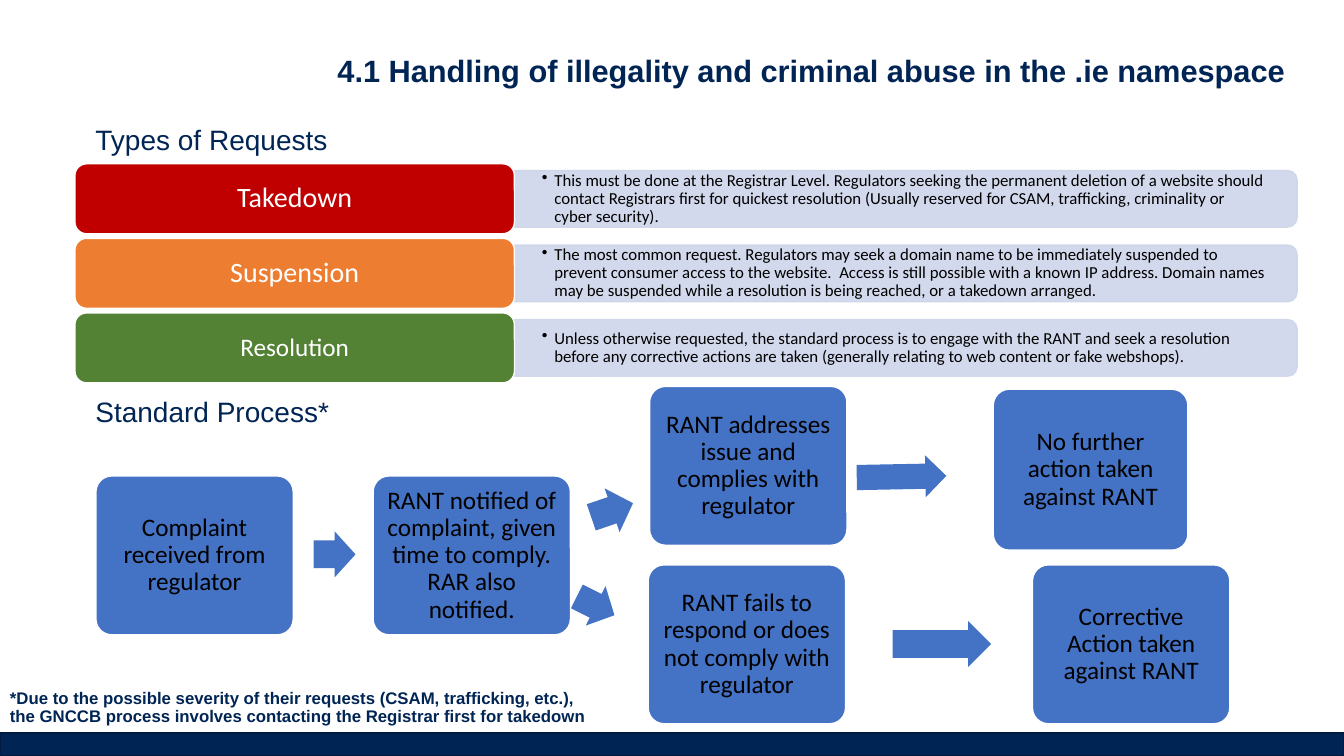
from pptx import Presentation
from pptx.dml.color import RGBColor
from pptx.enum.shapes import MSO_SHAPE
from pptx.enum.text import MSO_ANCHOR, PP_ALIGN
from pptx.oxml.ns import qn
from pptx.util import Pt
from lxml.etree import SubElement

COLORS = {
    "navy": "002554", "edge": "001B3E", "white": "FFFFFF", "black": "000000",
    "red": "C00000", "orange": "ED7D31", "green": "548235",
    "blue": "4472C4", "pale": "CFD5EA",
}

REQUESTS = [
    ("Takedown", "red", 20,
     "This must be done at the Registrar Level. Regulators seeking the permanent "
     "deletion of a website should contact Registrars first for quickest resolution "
     "(Usually reserved for CSAM, trafficking, criminality or cyber security)."),
    ("Suspension", "orange", 20,
     "The most common request. Regulators may seek a domain name to be immediately "
     "suspended to prevent consumer access to the website.  Access is still possible "
     "with a known IP address. Domain names may be suspended while a resolution is "
     "being reached, or a takedown arranged."),
    ("Resolution", "green", 18,
     "Unless otherwise requested, the standard process is to engage with the RANT and "
     "seek a resolution before any corrective actions are taken (generally relating to "
     "web content or fake webshops)."),
]

# Left, top, width, height within the process area
STEPS = [
    ("Complaint received from regulator", (0, 64, 141, 113.5)),
    ("RANT notified of complaint, given time to comply. RAR also notified.",
     (198, 64, 141, 113.5)),
    ("RANT addresses issue and complies with regulator", (395.5, 0, 141, 113.5)),
    ("RANT fails to respond or does not comply with regulator",
     (394.5, 127.5, 141, 113.5)),
    ("No further action taken against RANT", (641, 2, 139, 115)),
    ("Corrective Action taken against RANT", (669, 127.5, 141, 113.5)),
]

# Left, top, width, height within the process area, then rotation
ARROWS = [
    (155.5, 103.5, 30, 33, 0),
    (353, 72, 31.5, 33, -18.8),
    (342, 141, 30, 31.5, 26.6),
    (543.5, 49.5, 64, 30, -1.1),
    (569, 167.5, 70.5, 33, 0),
]


def color(name):
    return RGBColor.from_string(COLORS[name])


def write(shape, text, size=12, font="Calibri", ink="black", bold=False,
          align=PP_ALIGN.LEFT, anchor=MSO_ANCHOR.MIDDLE, inset=(7.2, 3.6), bullet=False):
    """Fill a shape with one formatted paragraph; inset is (sides, top and bottom)."""
    frame = shape.text_frame
    frame.word_wrap = True
    frame.vertical_anchor = anchor
    frame.margin_left = frame.margin_right = Pt(inset[0])
    frame.margin_top = frame.margin_bottom = Pt(inset[1])
    para = frame.paragraphs[0]
    para.alignment = align
    para.line_spacing = 0.9
    if bullet:
        props = para._p.get_or_add_pPr()
        props.set("marL", str(Pt(9)))
        props.set("indent", str(-Pt(9)))
        SubElement(props, qn("a:buChar")).set("char", "•")
    run = para.add_run()
    run.text = text
    run.font.size = Pt(size)
    run.font.name = font
    run.font.bold = bold
    run.font.color.rgb = color(ink)


def label(slide, text, box, **style):
    write(slide.shapes.add_textbox(*map(Pt, box)), text, **style)


def block(slide, kind, box, fill, line=None, turn=0, adjust=()):
    """Add a filled preset shape, outlined only when a line colour is given."""
    shape = slide.shapes.add_shape(kind, *map(Pt, box))
    shape.shadow.inherit = False
    shape.rotation = turn
    for index, value in enumerate(adjust):
        shape.adjustments[index] = value
    shape.fill.solid()
    shape.fill.fore_color.rgb = color(fill)
    if line:
        shape.line.color.rgb = color(line)
        shape.line.width = Pt(1)
    else:
        shape.line.fill.background()
    return shape


def fade(shape, percent):
    """Set the opacity of a shape's fill and line."""
    for tint in shape._element.spPr.iter(qn("a:srgbClr")):
        SubElement(tint, qn("a:alpha")).set("val", str(percent * 1000))


def request(slide, box, name, fill, size, detail):
    """Draw a coloured name with its explanation in a bar on the right."""
    left, top, width, height = box
    split, thick = 314, 40.5
    long = width - split
    middle = top + height / 2
    # The bar is an upright shape turned on its side about its centre
    bar = block(slide, MSO_SHAPE.ROUND_2_SAME_RECTANGLE,
                (left + split + (long - thick) / 2, middle - long / 2, thick, long),
                "pale", "pale", turn=90)
    fade(bar, 90)
    label(slide, detail, (left + split, middle - 18.5, long - 2, 37),
          inset=(19.5, 10), bullet=True)
    pill = block(slide, MSO_SHAPE.ROUNDED_RECTANGLE, (left, top, split, height),
                 fill, "white")
    write(pill, name, size=size, ink="white", align=PP_ALIGN.CENTER)


def requests(slide, box):
    left, top, width, height = box
    row, tall = 53.25, 50
    for index, item in enumerate(REQUESTS):
        request(slide, (left, top + index * row, width, tall), *item)


def process(slide, box):
    left, top = box[:2]
    for x, y, width, height, turn in ARROWS:
        block(slide, MSO_SHAPE.RIGHT_ARROW, (left + x, top + y, width, height),
              "blue", turn=turn, adjust=(0.6, 0.5))
    for text, (x, y, width, height) in STEPS:
        step = block(slide, MSO_SHAPE.ROUNDED_RECTANGLE,
                     (left + x, top + y, width, height), "blue", "white", adjust=(0.1,))
        write(step, text, size=18, align=PP_ALIGN.CENTER, inset=(5, 5))


def heading(slide, text, box):
    label(slide, text, box, size=20, font="Arial", ink="navy", anchor=MSO_ANCHOR.BOTTOM)


def footer(slide, box):
    left, top, width, height = box
    block(slide, MSO_SHAPE.RECTANGLE, box, "navy", "edge")
    label(slide, "*Due to the possible severity of their requests (CSAM, trafficking, "
          "etc.), the GNCCB process involves contacting the Registrar first for takedown",
          (left, top - 31, 433.5, 30), size=12, font="Arial", ink="navy", bold=True,
          anchor=MSO_ANCHOR.BOTTOM)


def main():
    deck = Presentation()
    deck.slide_width, deck.slide_height = Pt(960), Pt(540)
    slide = deck.slides.add_slide(deck.slide_layouts[6])
    label(slide, "4.1 Handling of illegality and criminal abuse in the .ie namespace",
          (234, 36.5, 726, 31), size=22, font="Arial", ink="navy", bold=True)
    heading(slide, "Types of Requests", (61, 85.5, 245.5, 30))
    requests(slide, (53.5, 117, 873, 156.5))
    heading(slide, "Standard Process*", (61, 279.5, 245.5, 30))
    process(slide, (68.5, 276, 810, 241))
    footer(slide, (0, 523.5, 960, 16.5))
    deck.save("out.pptx")


if __name__ == "__main__":
    main()
